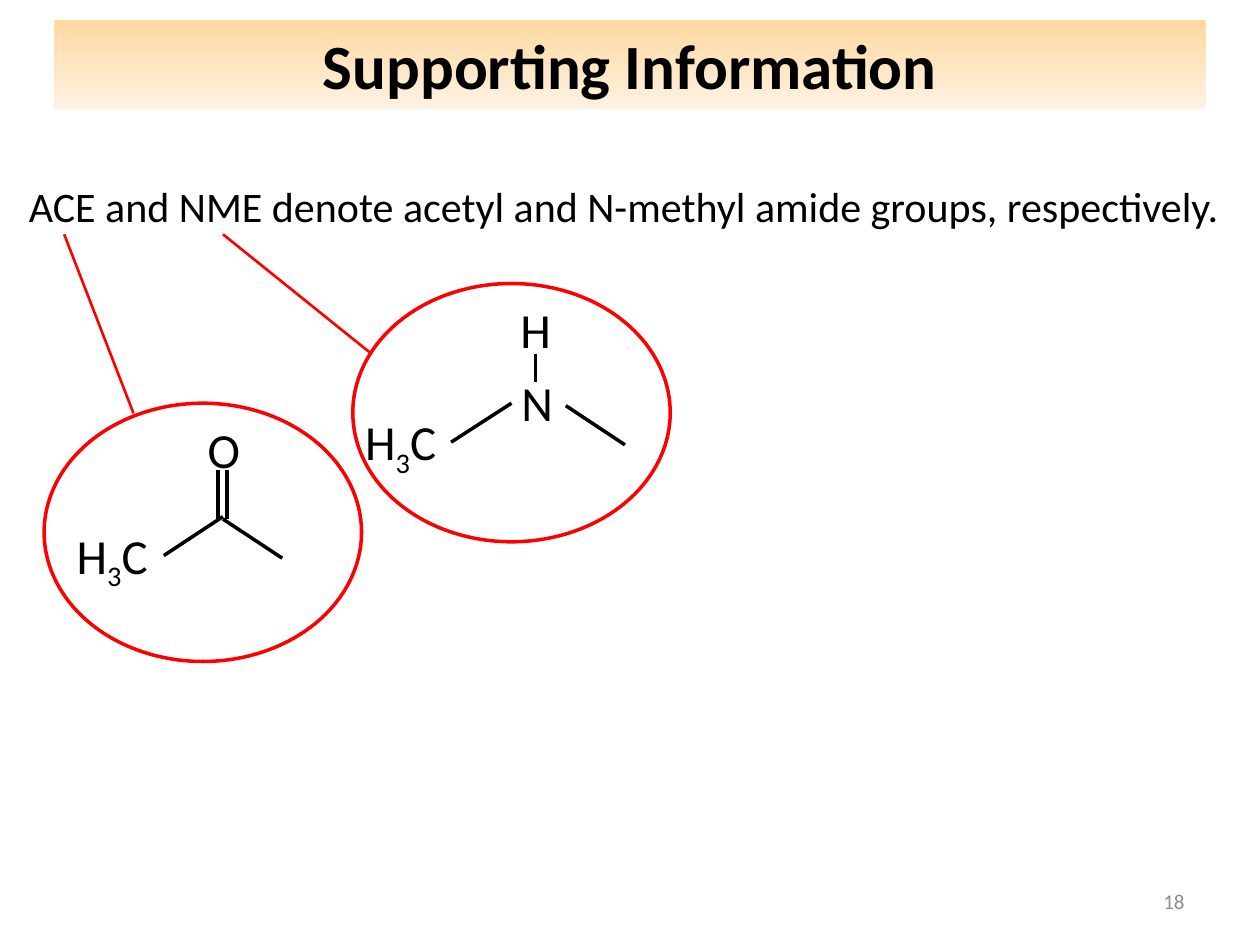
from lxml import etree
from pptx import Presentation
from pptx.dml.color import RGBColor
from pptx.enum import shapes, text
from pptx.oxml.ns import qn
from pptx.util import Pt

COLORS = {"ink": "000000", "callout": "FF0000", "number": "8C8C8C",
          "bar_top": "FFD8A0", "bar_bottom": "FFF2E3"}
FONT = "Calibri"

TITLE = "Supporting Information"
SENTENCE = "ACE and NME denote acetyl and N-methyl amide groups, respectively."
METHYL = [("H", False), ("3", True), ("C", False)]  # (text, subscript)

# Atoms: left, top, width, runs. Bonds and leaders: x1, y1, x2, y2.
GROUPS = [
    {"atoms": [(36.7, 296.6, 57, METHYL), (111.6, 236.2, 33, [("O", False)])],
     "bonds": [(124.6, 268.6, 124.6, 296.6), (129.6, 268.6, 129.6, 296.6),
               (127.4, 295.2, 93.6, 317.5), (127.4, 296.6, 161.3, 319)],
     "ellipse": (25.2, 230.4), "leader": (76.3, 236.2, 36.7, 133.9)},
    {"atoms": [(201.6, 231.8, 57, METHYL), (290.9, 209.5, 33, [("N", False)]),
               (290.2, 167.8, 32.4, [("H", False)])],
     "bonds": [(292.3, 230.4, 257.8, 252.7), (323.3, 231.8, 357.1, 254.2),
               (306, 202.3, 306, 218.2)],
     "ellipse": (201.6, 162), "leader": (212.4, 202.3, 127.4, 133.9)},
]
ELLIPSE_SIZE = (181.4, 147.6)


def color(name):
    return RGBColor.from_string(COLORS[name])


def add_runs(paragraph, runs, size, color_name="ink", bold=False):
    for content, subscript in runs:
        run = paragraph.add_run()
        run.text = content
        run.font.name, run.font.size, run.font.bold = FONT, Pt(size), bold
        run.font.color.rgb = color(color_name)
        if subscript:
            run._r.get_or_add_rPr().set("baseline", "-25000")


def add_text(slide, box, runs, size, color_name="ink", wrap=False):
    frame = slide.shapes.add_textbox(*map(Pt, box)).text_frame
    frame.word_wrap = wrap
    add_runs(frame.paragraphs[0], runs, size, color_name)
    return frame


def add_line(slide, ends, color_name, width):
    line = slide.shapes.add_connector(shapes.MSO_CONNECTOR.STRAIGHT, *map(Pt, ends))
    line.line.color.rgb = color(color_name)
    line.line.width = Pt(width)
    etree.SubElement(line._element.spPr, qn("a:effectLst"))


def add_title(slide):
    title = slide.shapes.title
    title.left, title.top, title.width, title.height = map(Pt, (31, 11.5, 658, 51))
    title.fill.gradient()
    title.fill.gradient_angle = 270
    for stop, name in zip(title.fill.gradient_stops, ("bar_top", "bar_bottom")):
        stop.color.rgb = color(name)
    for stop, position in zip(title.fill.gradient_stops, (0, 1)):
        stop.position = position
    title.text_frame.vertical_anchor = text.MSO_ANCHOR.TOP
    paragraph = title.text_frame.paragraphs[0]
    paragraph.alignment = text.PP_ALIGN.CENTER
    add_runs(paragraph, [(TITLE, False)], 36, bold=True)


def add_group(slide, group):
    for left, top, width, runs in group["atoms"]:
        add_text(slide, (left, top, width, 41), runs, 28)
    for bond in group["bonds"]:
        add_line(slide, bond, "ink", 2)
    ellipse = slide.shapes.add_shape(
        shapes.MSO_SHAPE.OVAL, *map(Pt, group["ellipse"] + ELLIPSE_SIZE))
    ellipse.shadow.inherit = False
    ellipse.fill.background()
    ellipse.line.color.rgb = color("callout")
    ellipse.line.width = Pt(2)
    add_line(slide, group["leader"], "callout", 1.5)


def main():
    presentation = Presentation()
    presentation.slide_width, presentation.slide_height = Pt(720), Pt(540)
    slide = presentation.slides.add_slide(presentation.slide_layouts[5])
    add_title(slide)
    number = add_text(slide, (516, 500.5, 168, 28.8), [("18", False)], 12, "number", True)
    number.vertical_anchor = text.MSO_ANCHOR.MIDDLE
    number.paragraphs[0].alignment = text.PP_ALIGN.RIGHT
    add_text(slide, (9.4, 99.4, 701.3, 36), [(SENTENCE, False)], 24)
    for group in GROUPS:
        add_group(slide, group)
    presentation.save("out.pptx")


if __name__ == "__main__":
    main()
